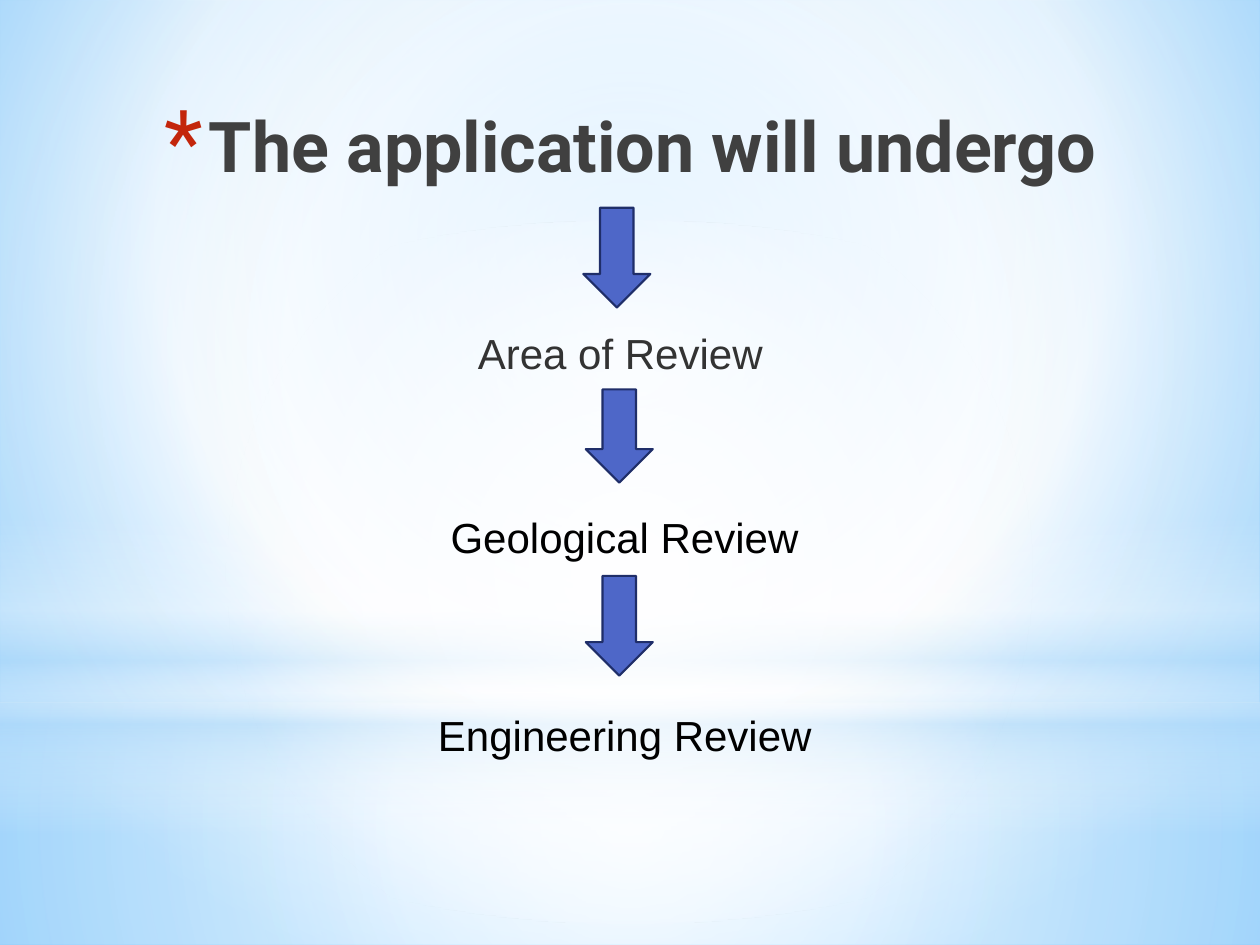
import pptx
import pptx.dml.color
import pptx.enum.shapes
import pptx.enum.text
import pptx.oxml
import pptx.oxml.ns
import pptx.util

Cm = pptx.util.Cm
Pt = pptx.util.Pt
RGB = pptx.dml.color.RGBColor
Kind = pptx.enum.shapes.MSO_SHAPE
Align = pptx.enum.text.PP_ALIGN
Fit = pptx.enum.text.MSO_AUTO_SIZE
Mid = pptx.enum.text.MSO_ANCHOR.MIDDLE
NS = pptx.oxml.ns.nsdecls("a")
qn = pptx.oxml.ns.qn

WHITE = RGB(0xFF, 0xFF, 0xFF)
PALE = RGB(0xB4, 0xDC, 0xFA)
SKY = RGB(0x9E, 0xD5, 0xFF)
AZURE = RGB(0x5B, 0xB9, 0xFF)
BLUE = RGB(0x4E, 0x67, 0xC8)
NAVY = RGB(0x1F, 0x2E, 0x69)
RED = RGB(0xC3, 0x26, 0x0C)
GREY = RGB(0x40, 0x40, 0x40)
DARK = RGB(0x33, 0x33, 0x33)
BLACK = RGB(0, 0, 0)

CENTRE = (50, 50, 50, 50)
WIDE, HIGH = 25.4, 19.05

# Panels: kind, box in cm, stops (place, colour, alpha), focus or None for vertical
PANELS = [
    (Kind.RECTANGLE, (0, 14.17, WIDE, 4.88),
     [(0, WHITE, 91), (37, WHITE, 76), (100, PALE, 79)], CENTRE),
    (Kind.RECTANGLE, (0, 0, WIDE, 14.17),
     [(0, WHITE, 89), (48, WHITE, 62), (100, PALE, 79)], CENTRE),
    (Kind.RECTANGLE, (0, 10.46, WIDE, 6.35),
     [(0, WHITE, 0), (29, WHITE, 30), (45, PALE, 40), (55, WHITE, 26),
      (65, PALE, 60), (100, WHITE, 0)], None),
    (Kind.OVAL, (0, 4.45, WIDE, 14.17),
     [(0, WHITE, 100), (56, WHITE, 0)], CENTRE),
]

# Steps: arrow (left, top, height), then label text, box and colour
STEPS = [
    ((11.76, 4.19, 2.01), "Area of Review", (9.09, 6.48, 6.83, 1.27), DARK),
    ((11.81, 7.85, 1.88), "Geological Review", (7.65, 10.19, 9.88, 1.27), BLACK),
    ((11.81, 11.61, 2.01), "Engineering Review", (8.53, 14.17, 8.13, 1.27), BLACK),
]


def assign(item, form):
    for name, value in form.items():
        setattr(item, name, value)


def blend(fill, root, stops, focus):
    """Give a fill a gradient; root is the element that holds it."""
    fill.solid()
    marks = "".join(
        f'<a:gs pos="{place * 1000}"><a:srgbClr val="{tint}">'
        f'<a:alpha val="{alpha * 1000}"/></a:srgbClr></a:gs>'
        for place, tint, alpha in stops)
    if focus:
        sides = " ".join(f'{side}="{part * 1000}"'
                         for side, part in zip("ltrb", focus))
        path = f'<a:path path="circle"><a:fillToRect {sides}/></a:path>'
    else:
        path = '<a:lin ang="5400000" scaled="0"/>'
    grad = pptx.oxml.parse_xml(
        f'<a:gradFill {NS} rotWithShape="1"><a:gsLst>{marks}</a:gsLst>{path}</a:gradFill>')
    old = root.find(".//" + qn("a:solidFill"))
    old.getparent().replace(old, grad)


def shape(slide, kind, box):
    item = slide.shapes.add_shape(kind, *map(Cm, box))
    item.shadow.inherit = False
    return item


def panel(slide, kind, box, stops, focus):
    item = shape(slide, kind, box)
    item.line.fill.background()
    blend(item.fill, item.element.spPr, stops, focus)


def arrow(slide, left, top, high):
    item = shape(slide, Kind.DOWN_ARROW, (left, top, 1.35, high))
    item.fill.solid()
    item.fill.fore_color.rgb = BLUE
    item.line.color.rgb = NAVY
    item.line.width = Pt(1.25)


def label(slide, text, box, tint, frame, font):
    """Add one centred line of text and return its paragraph."""
    item = slide.shapes.add_textbox(*map(Cm, box)).text_frame
    assign(item, {"word_wrap": True, **frame})
    para = item.paragraphs[0]
    para.alignment = Align.CENTER
    run = para.add_run()
    run.text = text
    assign(run.font, font)
    run.font.color.rgb = tint
    return para


def bullet(para, sign, tint, size, indent):
    props = para._p.get_or_add_pPr()
    props.set("marL", str(Cm(indent)))
    props.set("indent", str(-Cm(indent)))
    for part in (f'<a:buClr {NS}><a:srgbClr val="{tint}"/></a:buClr>',
                 f'<a:buSzPct {NS} val="{size * 1000}"/>',
                 f'<a:buFont {NS} typeface="Roboto"/>',
                 f'<a:buChar {NS} char="{sign}"/>'):
        props.append(pptx.oxml.parse_xml(part))


def main():
    deck = pptx.Presentation()
    assign(deck, {"slide_width": Cm(WIDE), "slide_height": Cm(HIGH)})
    slide = deck.slides.add_slide(deck.slide_layouts[6])
    blend(slide.background.fill, slide.element,
          [(0, SKY, 100), (60, WHITE, 100), (100, AZURE, 100)], (20, 10, 20, 60))
    for row in PANELS:
        panel(slide, *row)
    title = label(slide, "The application will undergo", (1.35, 1.45, 22.73, 2.92),
                  GREY, {"vertical_anchor": Mid},
                  {"name": "Roboto", "size": Pt(40), "bold": True})
    bullet(title, "*", RED, 128, 0.89)
    for point, text, box, tint in STEPS:
        arrow(slide, *point)
        label(slide, text, box, tint, {"auto_size": Fit.SHAPE_TO_FIT_TEXT},
              {"name": "Arial", "size": Pt(24)})
    deck.save("out.pptx")


if __name__ == "__main__":
    main()
